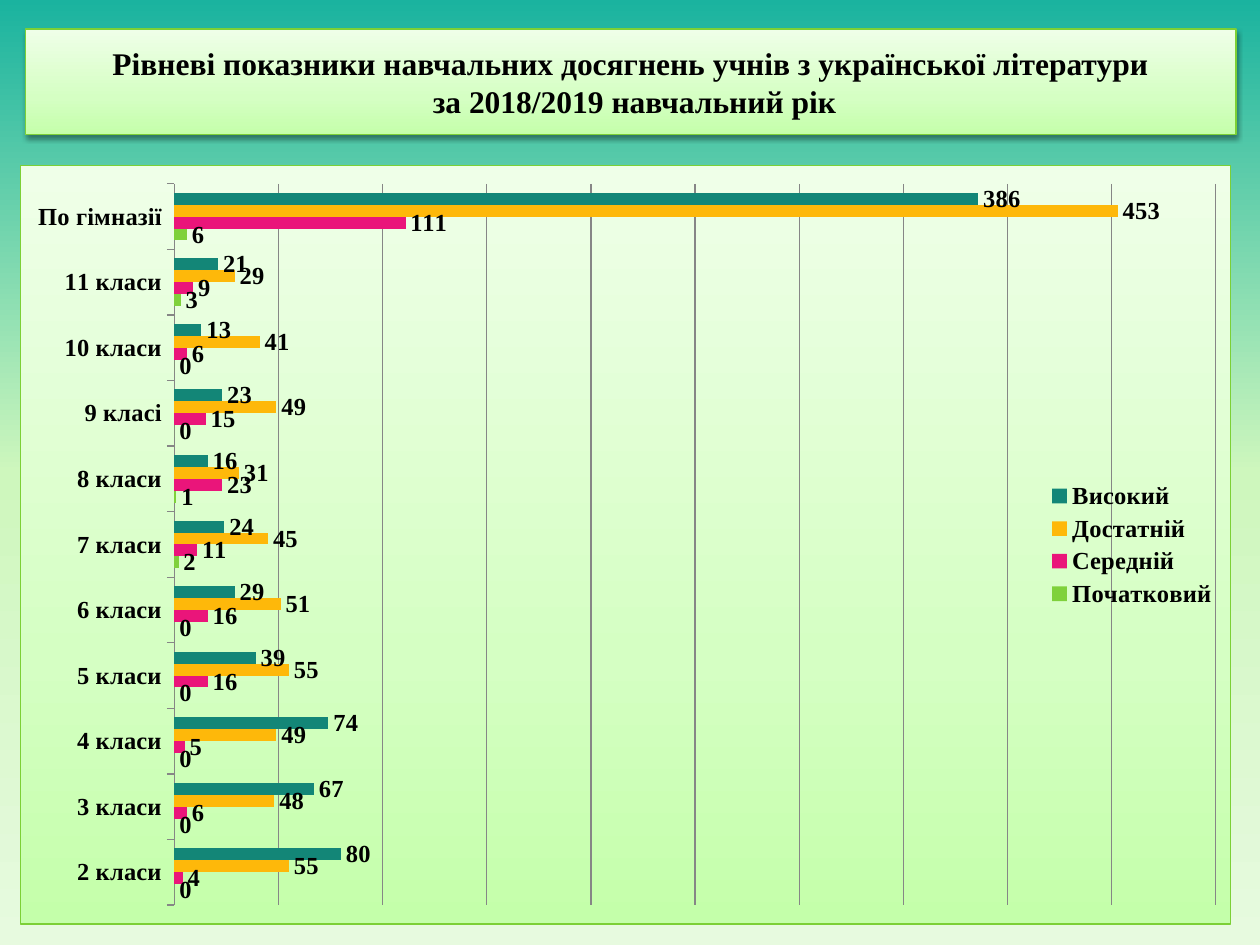
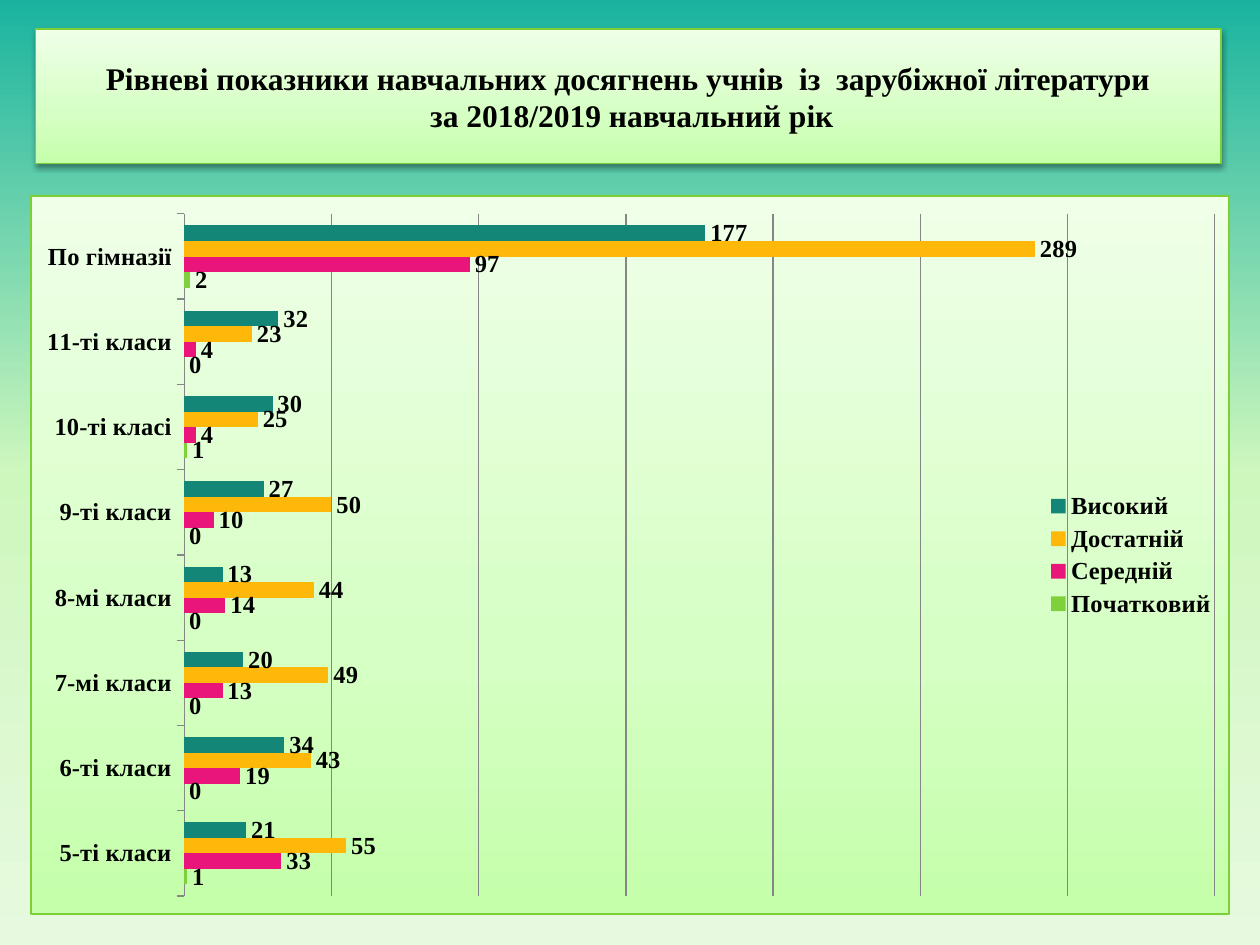
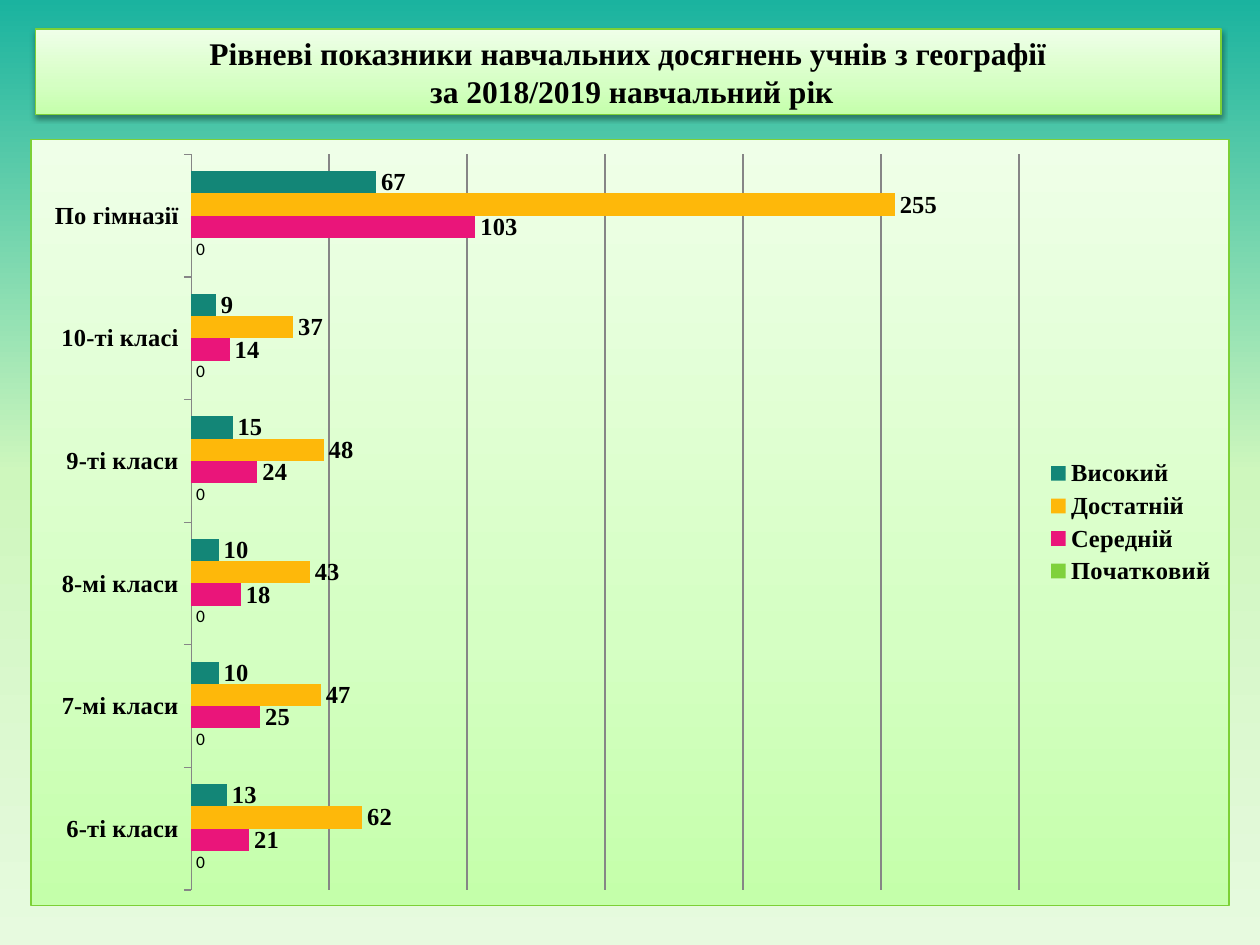
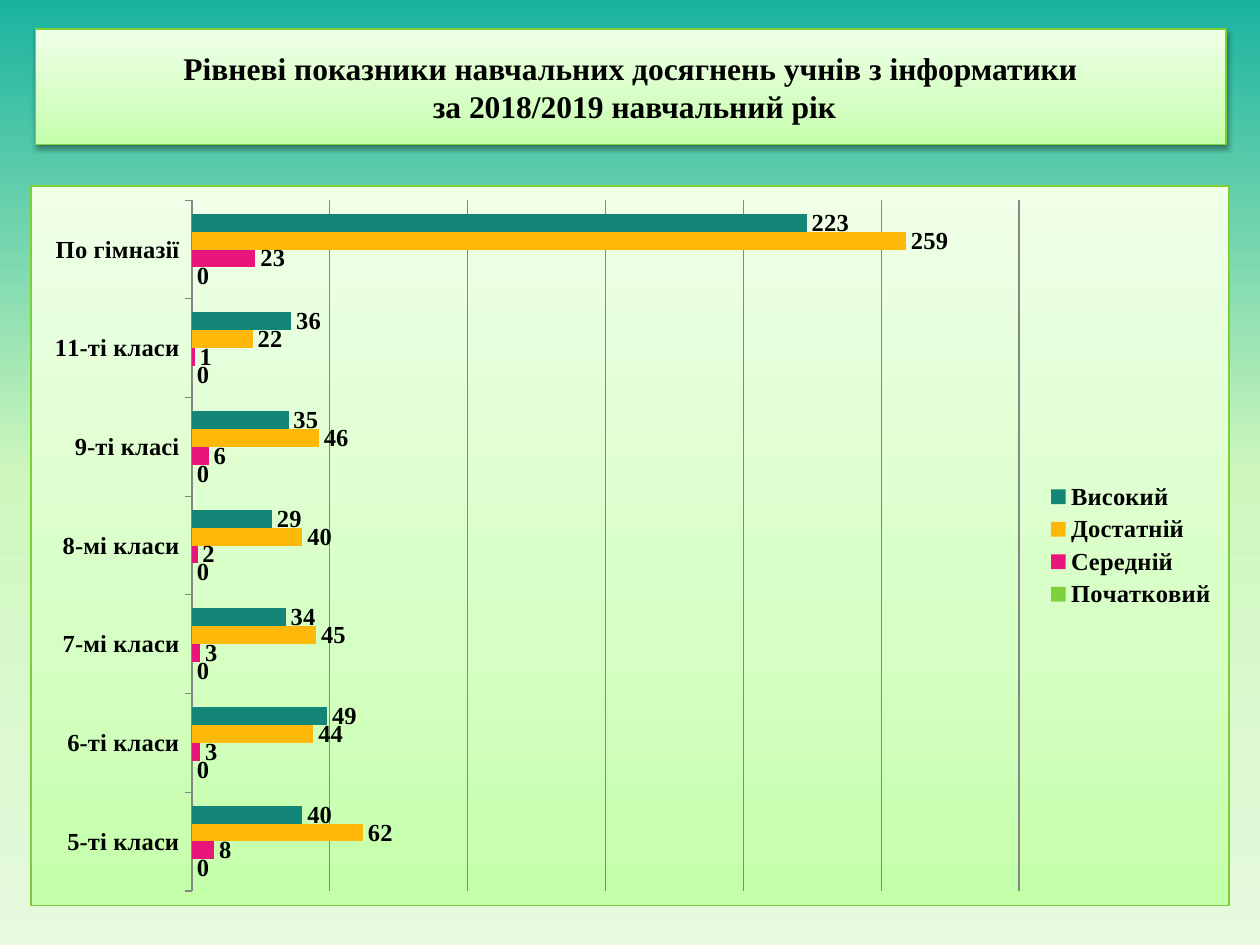
from dataclasses import dataclass

from pptx import Presentation
from pptx.chart.data import CategoryChartData
from pptx.dml.color import RGBColor
from pptx.enum.chart import XL_CHART_TYPE, XL_LABEL_POSITION, XL_LEGEND_POSITION, XL_TICK_MARK
from pptx.enum.text import MSO_ANCHOR, MSO_AUTO_SIZE, PP_ALIGN
from pptx.oxml import parse_xml
from pptx.oxml.ns import nsdecls, qn
from pptx.util import Inches, Pt


@dataclass(frozen=True)
class Theme:
    """Colours, fonts and type sizes shared by every slide."""

    background: tuple = ((0, "1AB39F"), (50, "CEF7BD"), (100, "E7FADF"))
    panel: tuple = ((0, "C4FFAA"), (35, "D5FFC3"), (100, "EFFFE8"))
    border: str = "7CD036"
    grid: str = "868686"
    text: str = "000000"
    heading_font: str = "Times New Roman"
    body_font: str = "Calibri"
    title_size: int = 18
    label_size: int = 14
    small_size: int = 10
    line_width: float = 0.75


THEME = Theme()
LEVELS = (
    ("Початковий", "7FD13B"),
    ("Середній", "EA157A"),
    ("Достатній", "FEB80A"),
    ("Високий", "138677"),
)


@dataclass(frozen=True)
class Report:
    """One subject: its boxes in inches and a row of level counts per class."""

    subject: str
    title_box: tuple
    chart_box: tuple
    rows: dict
    plot: tuple = ()
    plain_levels: tuple = ()


REPORTS = (
    Report(
        "учнів з української літератури",
        (0.2, 0.23, 9.61, 0.84),
        (0.16, 1.31, 9.61, 6.03),
        {
            "2 класи": (0, 4, 55, 80),
            "3 класи": (0, 6, 48, 67),
            "4 класи": (0, 5, 49, 74),
            "5 класи": (0, 16, 55, 39),
            "6 класи": (0, 16, 51, 29),
            "7 класи": (2, 11, 45, 24),
            "8 класи": (1, 23, 31, 16),
            "9 класі": (0, 15, 49, 23),
            "10 класи": (0, 6, 41, 13),
            "11 класи": (3, 9, 29, 21),
            "По гімназії": (6, 111, 453, 386),
        },
        plot=(0.127, 0.024, 0.861, 0.951),
    ),
    Report(
        "учнів  із  зарубіжної літератури",
        (0.28, 0.23, 9.41, 1.07),
        (0.24, 1.55, 9.52, 5.71),
        {
            "5-ті класи": (1, 33, 55, 21),
            "6-ті класи": (0, 19, 43, 34),
            "7-мі класи": (0, 13, 49, 20),
            "8-мі класи": (0, 14, 44, 13),
            "9-ті класи": (0, 10, 50, 27),
            "10-ті класі": (1, 4, 25, 30),
            "11-ті класи": (0, 4, 23, 32),
            "По гімназії": (2, 97, 289, 177),
        },
        plot=(0.128, 0.025, 0.86, 0.95),
    ),
    Report(
        "учнів з географії",
        (0.28, 0.23, 9.41, 0.68),
        (0.24, 1.1, 9.52, 6.09),
        {
            "6-ті класи": (0, 21, 62, 13),
            "7-мі класи": (0, 25, 47, 10),
            "8-мі класи": (0, 18, 43, 10),
            "9-ті класи": (0, 24, 48, 15),
            "10-ті класі": (0, 14, 37, 9),
            "По гімназії": (0, 103, 255, 67),
        },
        plain_levels=("Початковий",),
    ),
    Report(
        "учнів з інформатики",
        (0.28, 0.23, 9.45, 0.92),
        (0.24, 1.47, 9.52, 5.72),
        {
            "5-ті класи": (0, 8, 62, 40),
            "6-ті класи": (0, 3, 44, 49),
            "7-мі класи": (0, 3, 45, 34),
            "8-мі класи": (0, 2, 40, 29),
            "9-ті класі": (0, 6, 46, 35),
            "11-ті класи": (0, 1, 22, 36),
            "По гімназії": (0, 23, 259, 223),
        },
    ),
)


def gradient_xml(stops, angle):
    """Return the markup of a linear gradient fill."""
    marks = "".join(
        f'<a:gs pos="{position * 1000}"><a:srgbClr val="{color}"/></a:gs>'
        for position, color in stops
    )
    return (
        f'<a:gradFill {nsdecls("a")} rotWithShape="1"><a:gsLst>{marks}</a:gsLst>'
        f'<a:lin ang="{angle * 60000}" scaled="0"/></a:gradFill>'
    )


def apply_gradient(owner, element, stops, angle):
    """Give the owner of a fill a gradient with the stops listed."""
    owner.fill.gradient()
    gradient = next(element.iter(qn("a:gradFill")))
    gradient.getparent().replace(gradient, parse_xml(gradient_xml(stops, angle)))


def style_line(line, color):
    """Set the shared line width and a solid colour."""
    line.color.rgb = RGBColor.from_string(color)
    line.width = Pt(THEME.line_width)


def style_font(font, size, name=THEME.heading_font, bold=True):
    """Set family, size, weight and the text colour."""
    font.name = name
    font.size = Pt(size)
    font.bold = bold
    font.color.rgb = RGBColor.from_string(THEME.text)


def add_title(slide, subject, box):
    """Format the title placeholder as a shaded band in the box."""
    title = slide.shapes.title
    title.left, title.top, title.width, title.height = map(Inches, box)
    apply_gradient(title, title.element, THEME.panel, 270)
    style_line(title.line, THEME.border)
    title.shadow.inherit = False
    title.element.spPr.find(qn("a:effectLst")).append(parse_xml(
        f'<a:outerShdw {nsdecls("a")} blurRad="40000" dist="20000" dir="5400000" '
        'rotWithShape="0"><a:srgbClr val="000000"><a:alpha val="38000"/></a:srgbClr>'
        '</a:outerShdw>'
    ))
    frame = title.text_frame
    frame.text = f"Рівневі показники навчальних досягнень {subject}\v за 2018/2019 навчальний рік"
    frame.word_wrap = True
    frame.auto_size = MSO_AUTO_SIZE.NONE
    frame.vertical_anchor = MSO_ANCHOR.MIDDLE
    paragraph = frame.paragraphs[0]
    paragraph.alignment = PP_ALIGN.CENTER
    style_font(paragraph.font, THEME.title_size)


def style_chart_area(chart, plot):
    """Shade and frame the chart, and fix its inner plot area if one is given."""
    chart_element = chart.element.find(qn("c:chart"))
    chart_element.addnext(parse_xml(
        f'<c:spPr {nsdecls("c", "a")}>{gradient_xml(THEME.panel, 270)}'
        f'<a:ln w="{Pt(THEME.line_width)}"><a:solidFill><a:srgbClr val="{THEME.border}"/>'
        '</a:solidFill></a:ln></c:spPr>'
    ))
    if plot:
        plot_area = chart_element.find(qn("c:plotArea"))
        for layout in plot_area.findall(qn("c:layout")):
            plot_area.remove(layout)
        modes = '<c:layoutTarget val="inner"/><c:xMode val="edge"/><c:yMode val="edge"/>'
        sizes = "".join(f'<c:{key} val="{value}"/>' for key, value in zip("xywh", plot))
        plot_area.insert(0, parse_xml(
            f'<c:layout {nsdecls("c")}><c:manualLayout>{modes}{sizes}</c:manualLayout></c:layout>'
        ))


def style_axes(chart):
    """Format the class axis and keep only gridlines of the value axis."""
    classes, values = chart.category_axis, chart.value_axis
    classes.major_tick_mark = XL_TICK_MARK.OUTSIDE
    style_font(classes.tick_labels.font, THEME.label_size)
    style_line(classes.format.line, THEME.grid)
    values.visible = False
    values.has_major_gridlines = True
    style_line(values.major_gridlines.format.line, THEME.grid)


def style_series(series, color, plain):
    """Colour one level and show its values at the bar ends."""
    series.format.fill.solid()
    series.format.fill.fore_color.rgb = RGBColor.from_string(color)
    series.invert_if_negative = False
    labels = series.data_labels
    labels.show_value = True
    labels.position = XL_LABEL_POSITION.OUTSIDE_END
    if plain:
        style_font(labels.font, THEME.small_size, THEME.body_font, False)
    else:
        style_font(labels.font, THEME.label_size)


def add_level_chart(slide, report):
    """Add the bar chart of levels by class."""
    data = CategoryChartData()
    data.categories = list(report.rows)
    for (level, _), counts in zip(LEVELS, zip(*report.rows.values())):
        data.add_series(level, counts)
    box = map(Inches, report.chart_box)
    chart = slide.shapes.add_chart(XL_CHART_TYPE.BAR_CLUSTERED, *box, data).chart
    style_font(chart.font, THEME.small_size, THEME.body_font, False)
    chart.has_title = False
    chart.has_legend = True
    chart.legend.position = XL_LEGEND_POSITION.RIGHT
    chart.legend.include_in_layout = False
    style_font(chart.legend.font, THEME.label_size)
    style_chart_area(chart, report.plot)
    style_axes(chart)
    bars = chart.plots[0]
    bars.gap_width = 150
    bars.vary_by_categories = False
    for series, (level, color) in zip(bars.series, LEVELS):
        style_series(series, color, level in report.plain_levels)


def main():
    """Build one slide for each report and save the presentation."""
    presentation = Presentation()
    presentation.slide_width, presentation.slide_height = Inches(10), Inches(7.5)
    master = presentation.slide_master
    apply_gradient(master.background, master.element, THEME.background, 90)
    title_only = presentation.slide_layouts[5]
    for report in REPORTS:
        slide = presentation.slides.add_slide(title_only)
        add_title(slide, report.subject, report.title_box)
        add_level_chart(slide, report)
    presentation.save("out.pptx")


if __name__ == "__main__":
    main()
